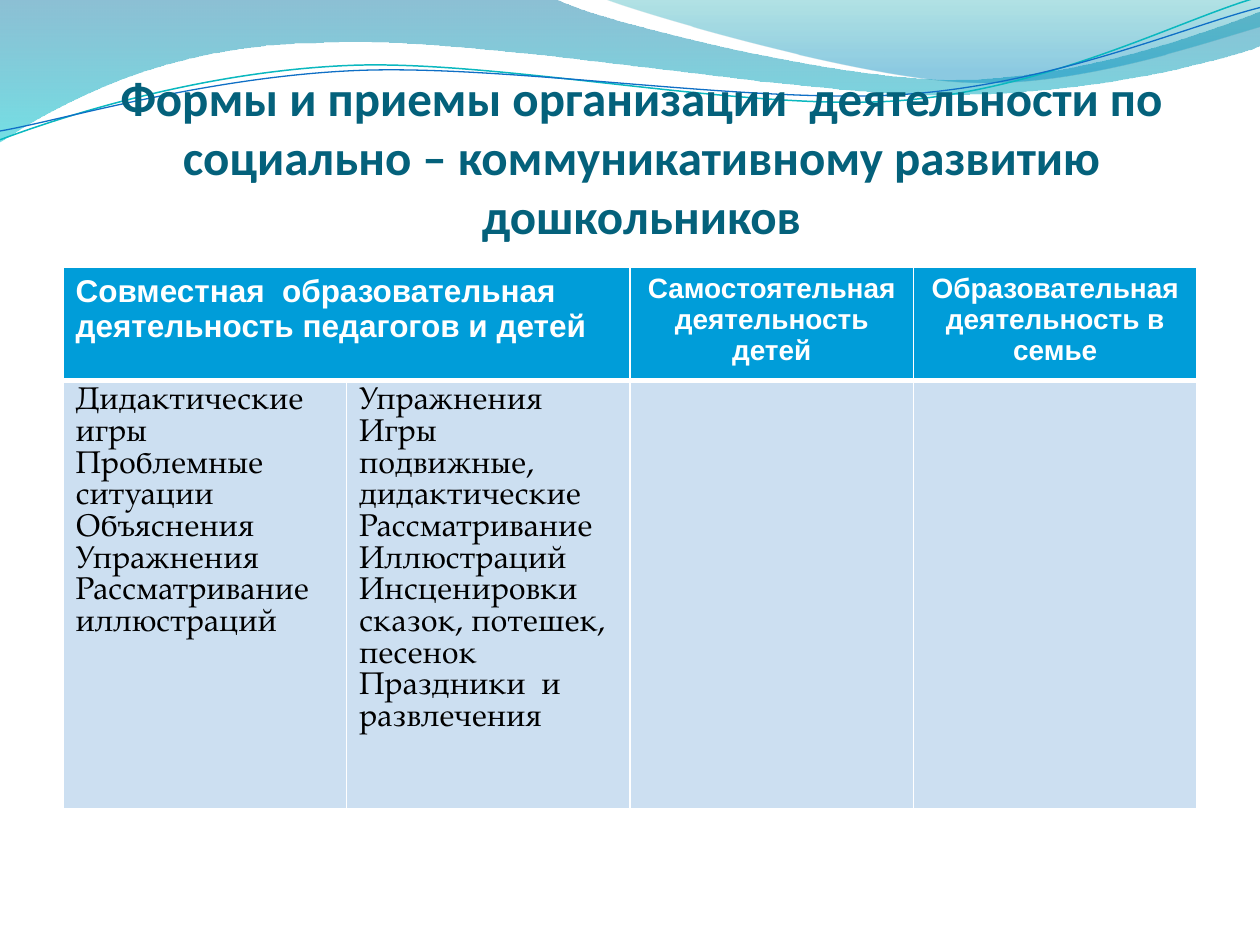
from dataclasses import dataclass
from itertools import chain

from lxml import etree
from pptx import Presentation
from pptx import util as u
from pptx.dml.color import RGBColor
from pptx.enum import text
from pptx.oxml import ns


@dataclass(frozen=True)
class Theme:
    white: str = "FFFFFF"
    title: str = "04617B"
    header: str = "009DD9"
    body: str = "CCDFF1"
    ink: str = "000000"
    teal_line: str = "0AB8BF"
    blue_line: str = "0F6FC6"
    # Gradient stops: position, colour, opacity in percent
    big_wave: tuple = ((0, "0074A1", 45), (1, "00C6CF", 55))
    small_wave: tuple = ((0, "00A1A9", 30), (0.8, "008BBF", 45))
    title_size: int = 28
    large: int = 18
    small: int = 16


THEME = Theme()
CENTER = text.PP_ALIGN.CENTER
LEFT = text.PP_ALIGN.LEFT

TITLE = ("Формы и приемы организации  деятельности по "
         "социально – коммуникативному развитию дошкольников")
TITLE_FONT = {"name": "Calibri", "size": u.Pt(THEME.title_size), "bold": True}
HEADER_FONT = {"name": "Arial", "size": u.Pt(THEME.small), "bold": True}
JOINT_FONT = {**HEADER_FONT, "size": u.Pt(THEME.large)}
BODY_FONT = {"name": "TeX Gyre Pagella", "size": u.Pt(THEME.large), "bold": False}

# Column number: paragraphs, alignment, font
HEADERS = {
    0: (["Совместная  образовательная  деятельность педагогов и детей"],
        LEFT, JOINT_FONT),
    2: (["Самостоятельная", "деятельность детей"], CENTER, HEADER_FONT),
    3: (["Образовательная", "деятельность в семье"], CENTER, HEADER_FONT),
}
ACTIVITIES = {
    0: ["Дидактические игры", "Проблемные ситуации", "Объяснения",
        "Упражнения", "Рассматривание", "иллюстраций"],
    1: ["Упражнения", "Игры  подвижные,", "дидактические", "Рассматривание",
        "Иллюстраций", "Инсценировки сказок, потешек, песенок",
        "Праздники  и", "развлечения"],
}

# Outlines in inches: one point is a straight step, three points a Bézier step
BIG_WAVE = [
    [(0, -0.01)], [(4.4, -0.01)],
    [(4.76, 0.17), (6.64, 0.63), (7.58, 0.63)],
    [(8.53, 0.63), (9.58, 0.26), (10, 0.09)], [(10.01, 0.36)],
    [(9.83, 0.44), (8.7, 0.76), (7.46, 0.75)],
    [(6.22, 0.75), (3.82, 0.28), (2.57, 0.34)],
    [(1.29, 0.35), (0.46, 0.83), (-0.01, 1.13)], [(0, -0.01)],
]
SMALL_WAVE = [
    [(4.79, -0.01)],
    [(5.09, 0.11), (6.82, 0.62), (7.69, 0.65)],
    [(8.56, 0.69), (9.61, 0.32), (10, 0.21)], [(10, 0)], [(4.79, -0.01)],
]
TEAL_CURVE = [
    [(0, 1.11)],
    [(0.48, 0.93), (1.58, 0.57), (2.77, 0.52)],
    [(3.95, 0.47), (5.93, 0.89), (7.13, 0.8)],
    [(8.33, 0.71), (9.38, 0.15), (9.98, -0.02)],
]
BLUE_CURVE = [
    [(0, 1.04)],
    [(0.47, 0.96), (1.64, 0.61), (2.83, 0.56)],
    [(4.03, 0.51), (5.97, 0.83), (7.17, 0.75)],
    [(8.36, 0.67), (9.41, 0.21), (10, 0.06)],
]


def rgb(value):
    return RGBColor.from_string(value)


def set_attributes(target, values):
    for name, value in values.items():
        setattr(target, name, value)


def write_paragraphs(frame, lines, align, font, color):
    for index, line in enumerate(lines):
        paragraph = frame.add_paragraph() if index else frame.paragraphs[0]
        paragraph.alignment = align
        run = paragraph.add_run()
        run.text = line
        set_attributes(run.font, font)
        run.font.color.rgb = rgb(color)


def add_outline(slide, outline, close):
    points = [(u.Inches(x), u.Inches(y)) for x, y in chain(*outline)]
    builder = slide.shapes.build_freeform(*points[0])
    builder.add_line_segments(points[1:], close=close)
    shape = builder.convert_to_shape()
    shape.shadow.inherit = False

    # Join the three points of each Bézier step into one curve
    segments = iter(shape._element.findall(".//" + ns.qn("a:lnTo")))
    for step in outline[1:]:
        lines = [next(segments) for _ in step]
        if len(step) == 3:
            curve = etree.Element(ns.qn("a:cubicBezTo"))
            lines[0].addprevious(curve)
            for line in lines:
                curve.append(line[0])
                line.getparent().remove(line)
    return shape


def add_wave(slide, outline, stops):
    wave = add_outline(slide, outline, True)
    wave.line.fill.background()
    wave.fill.gradient()
    wave.fill.gradient_angle = 270
    colors = wave._element.findall(".//" + ns.qn("a:gs"))
    for stop, element, (position, color, opacity) in zip(
            wave.fill.gradient_stops, colors, stops):
        stop.position = position
        stop.color.rgb = rgb(color)
        etree.SubElement(element[0], ns.qn("a:alpha"), val=str(opacity * 1000))


def add_curve(slide, outline, color, width):
    curve = add_outline(slide, outline, False)
    curve.fill.background()
    curve.line.color.rgb = rgb(color)
    curve.line.width = u.Pt(width)


def add_title(slide):
    box = slide.shapes.add_textbox(
        u.Inches(0.59), u.Inches(0.52), u.Inches(9), u.Inches(1.42))
    set_attributes(box.text_frame, {
        "word_wrap": True, "vertical_anchor": text.MSO_ANCHOR.BOTTOM,
        "margin_left": 0, "margin_top": u.Inches(0.05),
        "margin_right": 0, "margin_bottom": 0})
    write_paragraphs(box.text_frame, [TITLE], CENTER, TITLE_FONT, THEME.title)


def style_cell(cell, color, bottom):
    properties = cell._tc.get_or_add_tcPr()
    for side, width in {"L": 1, "R": 1, "T": 1, "B": bottom}.items():
        line = etree.SubElement(properties, ns.qn("a:ln" + side),
                                w=str(u.Pt(width)))
        fill = etree.SubElement(line, ns.qn("a:solidFill"))
        etree.SubElement(fill, ns.qn("a:srgbClr"), val=THEME.white)
    cell.fill.solid()
    cell.fill.fore_color.rgb = rgb(color)


def add_activity_table(slide):
    frame = slide.shapes.add_table(
        2, 4, u.Inches(0.5), u.Inches(2.12), u.Inches(9), u.Inches(4.57))
    table = frame.table
    # Rows grow with their wording
    for row in table.rows:
        row.height = u.Inches(0.41)
    frame.height = u.Inches(4.57)

    # Fills and borders, with a thick rule under the header
    for column in range(4):
        style_cell(table.cell(0, column), THEME.header, 3)
        style_cell(table.cell(1, column), THEME.body, 1)
    table.cell(0, 0).merge(table.cell(0, 1))

    # Wording
    for column, (lines, align, font) in HEADERS.items():
        write_paragraphs(table.cell(0, column).text_frame,
                         lines, align, font, THEME.white)
    for column, lines in ACTIVITIES.items():
        write_paragraphs(table.cell(1, column).text_frame,
                         lines, LEFT, BODY_FONT, THEME.ink)


def main():
    deck = Presentation()
    deck.slide_width, deck.slide_height = u.Inches(10), u.Inches(7.5)
    slide = deck.slides.add_slide(deck.slide_layouts[6])

    # Wavy band along the top
    add_wave(slide, BIG_WAVE, THEME.big_wave)
    add_wave(slide, SMALL_WAVE, THEME.small_wave)
    add_curve(slide, TEAL_CURVE, THEME.teal_line, 0.85)
    add_curve(slide, BLUE_CURVE, THEME.blue_line, 0.75)

    # Content
    add_title(slide)
    add_activity_table(slide)
    deck.save("out.pptx")


if __name__ == "__main__":
    main()
